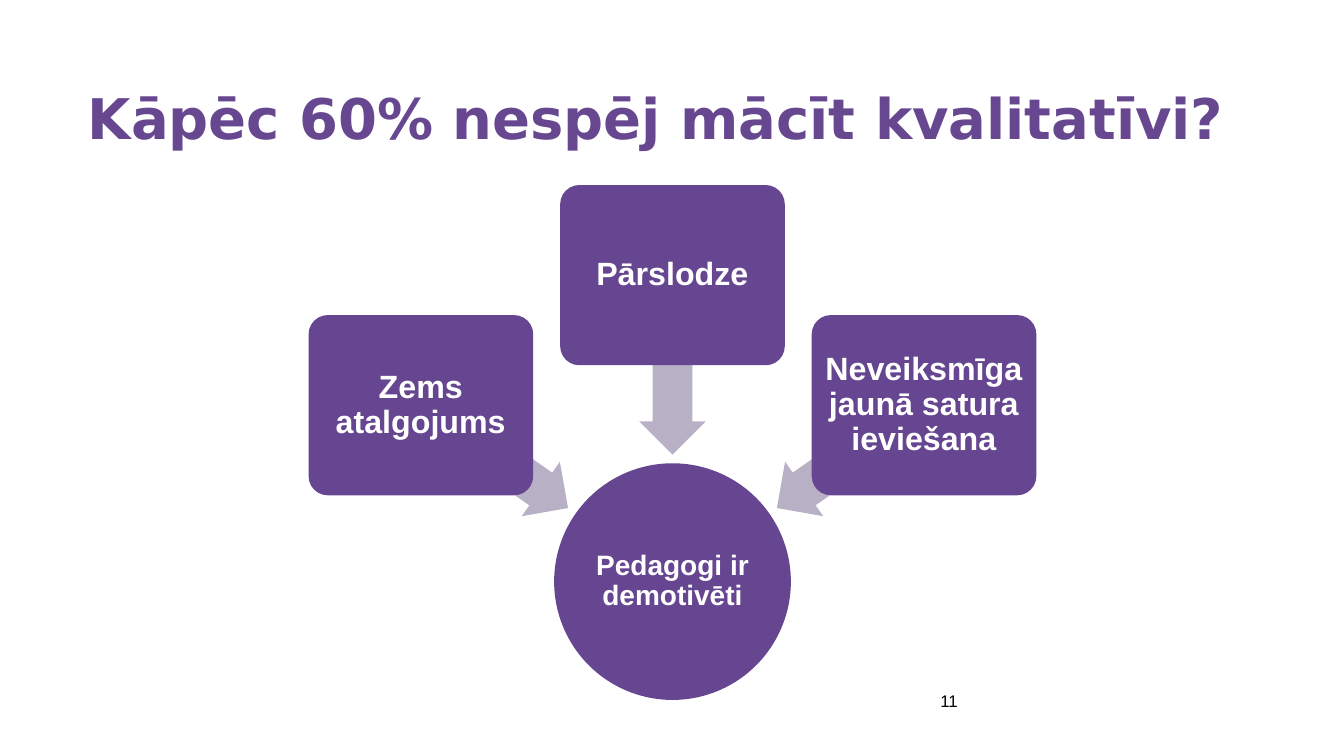
"""Slide with three causes whose arrows lead to one central result."""
from pptx import Presentation
from pptx.dml.color import RGBColor
from pptx.enum.shapes import MSO_SHAPE
from pptx.enum.text import MSO_ANCHOR, MSO_AUTO_SIZE, PP_ALIGN
from pptx.util import Inches, Pt

COLORS = {"title": "664790", "node": "664690", "arrow": "B8B1C6",
          "light": "FFFFFF", "dark": "000000"}
CENTER_X = 6.67
STEP_X = 2.495
BOX_W, BOX_H = 2.2, 1.76
ARROW_W, ARROW_H = 1.78, 0.66
HUB_D = 2.32


def add_part(kind, cx, cy, w, h, color):
    sp = slide.shapes.add_shape(kind, Inches(cx - w / 2), Inches(cy - h / 2),
                                Inches(w), Inches(h))
    sp.shadow.inherit = False
    sp.fill.solid()
    sp.fill.fore_color.rgb = RGBColor.from_string(COLORS[color])
    sp.line.fill.background()
    return sp


def set_text(sp, text, size, color, align, inset, font="Arial", bold=True,
             anchor=MSO_ANCHOR.MIDDLE, spacing=0.9):
    tf = sp.text_frame
    tf.word_wrap = True
    tf.auto_size = MSO_AUTO_SIZE.NONE
    tf.vertical_anchor = anchor
    tf.margin_left = tf.margin_right = Inches(inset)
    tf.margin_top = tf.margin_bottom = Inches(inset)
    tf.text = text
    p = tf.paragraphs[0]
    p.alignment = align
    p.line_spacing = spacing
    r = p.runs[0]
    r.font.name = font
    r.font.size = Pt(size)
    r.font.bold = bold
    r.font.color.rgb = RGBColor.from_string(COLORS[color])


prs = Presentation()
prs.slide_width, prs.slide_height = Inches(13.33), Inches(7.5)
slide = prs.slides.add_slide(prs.slide_layouts[5])

title = slide.shapes.title
title.left, title.top = Inches(0.87), Inches(0.9)
title.width, title.height = Inches(11.98), Inches(1.45)
set_text(title, "Kāpēc 60% nespēj mācīt kvalitatīvi?", 40, "title",
         PP_ALIGN.LEFT, 0, font="DejaVu Sans", anchor=MSO_ANCHOR.TOP)

hub = add_part(MSO_SHAPE.OVAL, CENTER_X, 5.77, HUB_D, HUB_D, "node")
hub.line.color.rgb = RGBColor.from_string(COLORS["node"])
hub.line.width = Pt(2)
set_text(hub, "Pedagogi ir demotivēti", 20, "light", PP_ALIGN.CENTER, 0.01)

causes = [
    (-1, "Zems atalgojums", 4.02, 4.53, 215),
    (0, "Pārslodze", 2.73, 3.62, 270),
    (1, "Neveiksmīga jaunā satura ieviešana", 4.02, 4.53, 325),
]
for side, text, box_y, arrow_y, angle in causes:
    arrow = add_part(MSO_SHAPE.LEFT_ARROW, CENTER_X + side * 1.765, arrow_y,
                     ARROW_W, ARROW_H, "arrow")
    arrow.adjustments[0], arrow.adjustments[1] = 0.6, 0.5
    arrow.rotation = angle
    box = add_part(MSO_SHAPE.ROUNDED_RECTANGLE, CENTER_X + side * STEP_X, box_y,
                   BOX_W, BOX_H, "node")
    box.adjustments[0] = 0.1
    box.line.color.rgb = RGBColor.from_string(COLORS["node"])
    box.line.width = Pt(2)
    set_text(box, text, 23, "light", PP_ALIGN.CENTER, 0.05)

number = slide.shapes.add_textbox(Inches(6.44), Inches(6.75), Inches(3.11), Inches(0.4))
set_text(number, "11", 12, "dark", PP_ALIGN.RIGHT, 0.05, bold=False, spacing=1.0)

prs.save("out.pptx")
